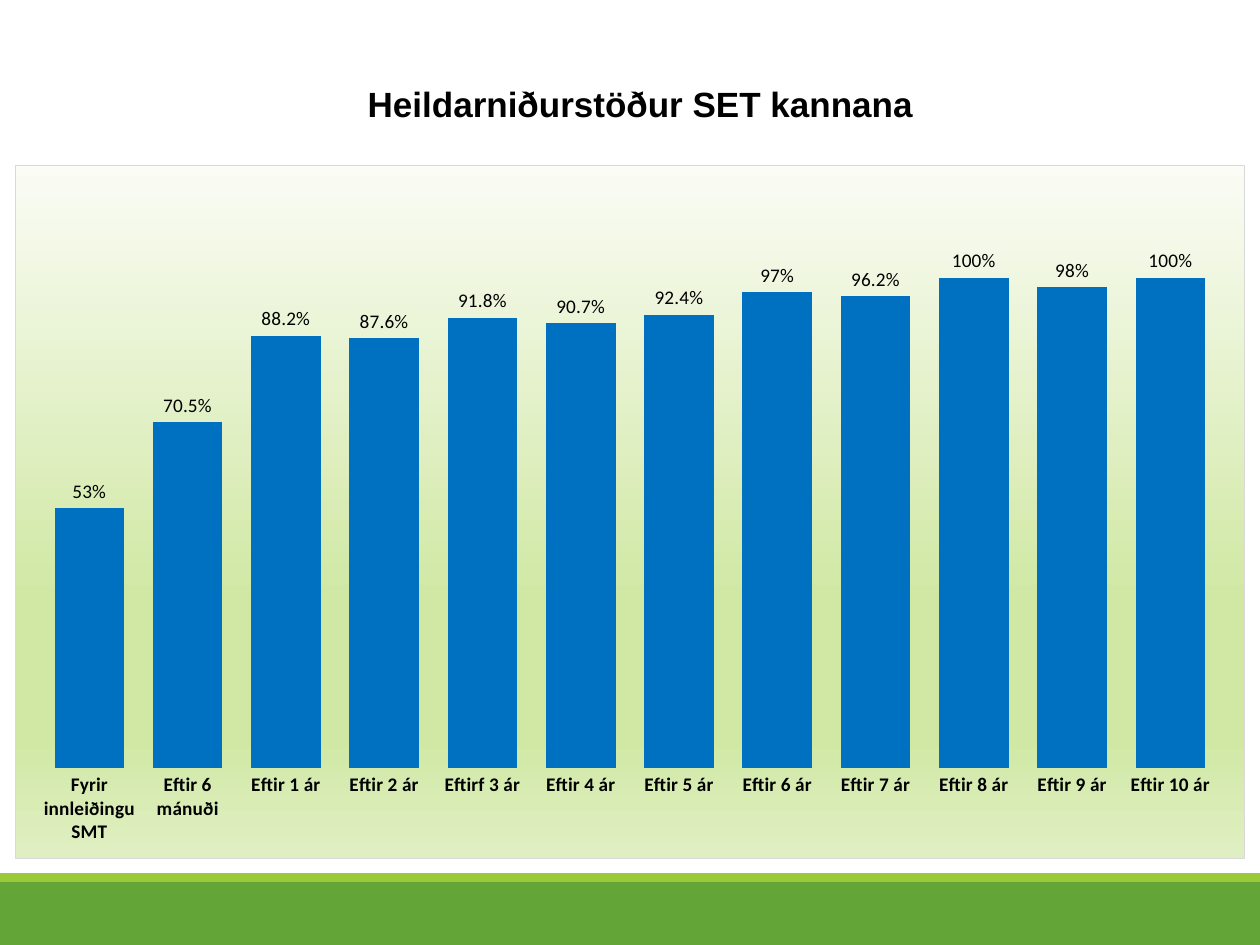
"""Build the slide with the overall SET survey results as a column chart."""
from lxml import etree
from pptx import Presentation
from pptx import util as u
from pptx.chart import data as cd
from pptx.dml.color import RGBColor
from pptx.enum import chart as ch, shapes, text
from pptx.oxml import parse_xml

Pt = u.Pt
HUES = {"black": "000000", "bar": "0070C0", "green": "63A537", "lime": "99CB38", "edge": "D9D9D9"}
FADE = [(0, "FAFCF5"), (62, "D1E8A5"), (83, "D1E8A5"), (100, "E0EFC3")]
ROWS = [
    ("Fyrir innleiðingu SMT", 53), ("Eftir 6 mánuði", 70.5), ("Eftir 1 ár", 88.2),
    ("Eftir 2 ár", 87.6), ("Eftirf 3 ár", 91.8), ("Eftir 4 ár", 90.7),
    ("Eftir 5 ár", 92.4), ("Eftir 6 ár", 97), ("Eftir 7 ár", 96.2),
    ("Eftir 8 ár", 100), ("Eftir 9 ár", 98), ("Eftir 10 ár", 100),
]
NS = ('xmlns:c="http://schemas.openxmlformats.org/drawingml/2006/chart" '
      'xmlns:a="http://schemas.openxmlformats.org/drawingml/2006/main"')


def hue(name):
    return RGBColor.from_string(HUES[name])


def style(font, size, face, bold):
    font.size, font.name, font.bold = Pt(size), face, bold
    font.color.rgb = hue("black")


prs = Presentation()
prs.slide_width, prs.slide_height = Pt(720), Pt(540)
slide = prs.slides.add_slide(prs.slide_layouts[5])

for name, top, high in [("green", 504, 36), ("lime", 499, 5)]:
    band = slide.shapes.add_shape(shapes.MSO_SHAPE.RECTANGLE, 0, Pt(top), Pt(720), Pt(high))
    band.shadow.inherit = False
    band.fill.solid()
    band.fill.fore_color.rgb = hue(name)
    band.line.fill.background()

title = slide.shapes.title
title.left, title.top, title.width, title.height = Pt(65.5), Pt(43.2), Pt(601), Pt(31.7)
frame = title.text_frame
frame.word_wrap = True
frame.auto_size = text.MSO_AUTO_SIZE.SHAPE_TO_FIT_TEXT
frame.vertical_anchor = text.MSO_ANCHOR.MIDDLE
para = frame.paragraphs[0]
para.alignment = text.PP_ALIGN.CENTER
run = para.add_run()
run.text = "Heildarniðurstöður SET kannana"
style(run.font, 20, "Arial", True)

data = cd.CategoryChartData(number_format='General"%"')
data.categories = [cat for cat, val in ROWS]
data.add_series("Series 1", [val for cat, val in ROWS])
chart = slide.shapes.add_chart(ch.XL_CHART_TYPE.COLUMN_CLUSTERED,
                               Pt(8.6), Pt(94.3), Pt(702.8), Pt(396.7), data).chart
chart.has_legend = chart.has_title = False
style(chart.font, 10, "Calibri", False)

plot = chart.plots[0]
plot.gap_width = 41
plot.vary_by_categories = False
fill = plot.series[0].format.fill
fill.solid()
fill.fore_color.rgb = hue("bar")
plot.has_data_labels = True
tags = plot.data_labels
tags.show_value = True
tags.position = ch.XL_LABEL_POSITION.OUTSIDE_END
tags.number_format, tags.number_format_is_linked = 'General"%"', False
style(tags.font, 11, "Calibri", False)

cats = chart.category_axis
cats.major_tick_mark = ch.XL_TICK_MARK.NONE
cats.format.line.fill.background()
style(cats.tick_labels.font, 11, "Calibri", True)
vals = chart.value_axis
vals.minimum_scale, vals.maximum_scale = 0, 120
vals.has_major_gridlines = False
vals.visible = False

root = chart.element
area = root.find(".//{*}plotArea")
for old in area.findall("{*}layout"):
    area.remove(old)
box = etree.Element("box")
spots = "".join(f'<c:{key} val="{val}"/>' for key, val in [
    ("layoutTarget", "inner"), ("xMode", "edge"), ("yMode", "edge"),
    ("x", 0.02), ("y", 0.02), ("w", 0.96), ("h", 0.85)])
area.insert(0, parse_xml(f"<c:layout {NS}><c:manualLayout>{spots}</c:manualLayout></c:layout>"))
stops = "".join(f'<a:gs pos="{pos * 1000}"><a:srgbClr val="{tint}"/></a:gs>' for pos, tint in FADE)
root.find("{*}chart").addnext(parse_xml(
    f'<c:spPr {NS}><a:gradFill><a:gsLst>{stops}</a:gsLst><a:lin ang="5400000" scaled="0"/></a:gradFill>'
    f'<a:ln w="{Pt(0.75)}"><a:solidFill><a:srgbClr val="{HUES["edge"]}"/></a:solidFill></a:ln></c:spPr>'))

prs.save("out.pptx")
